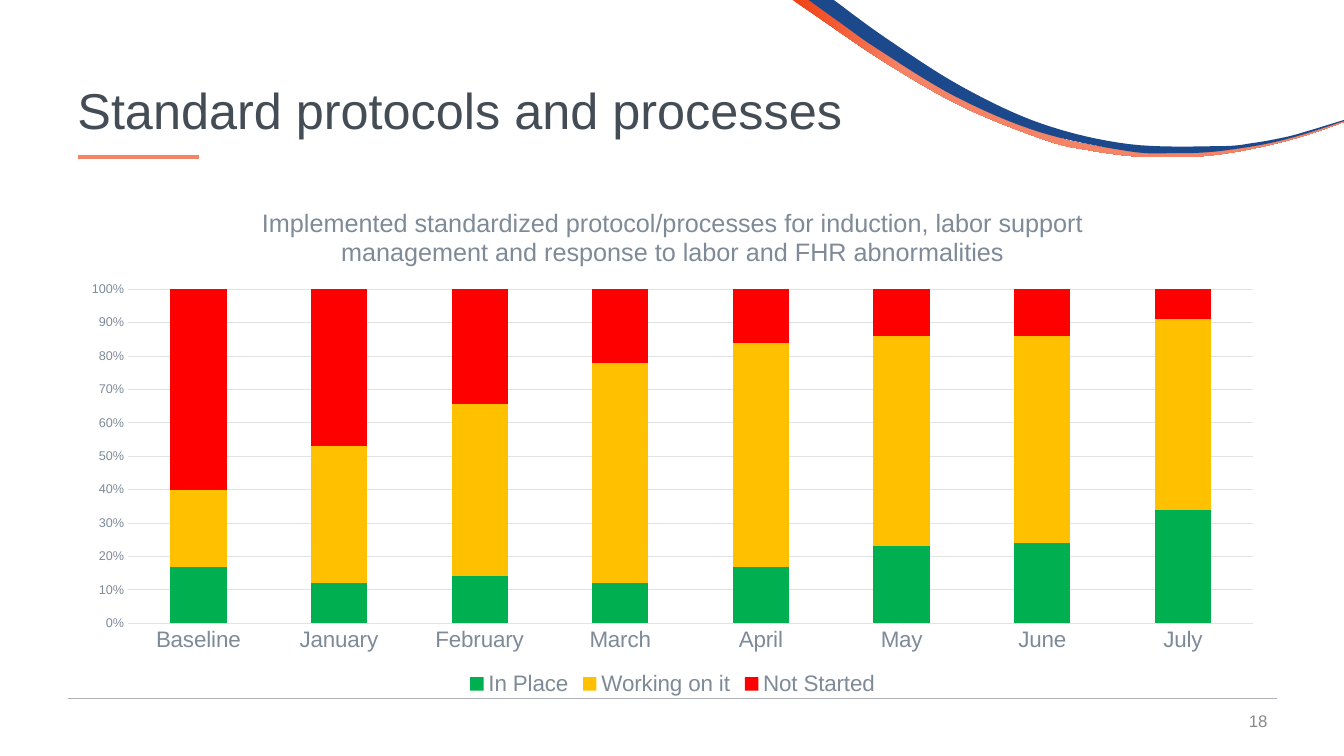
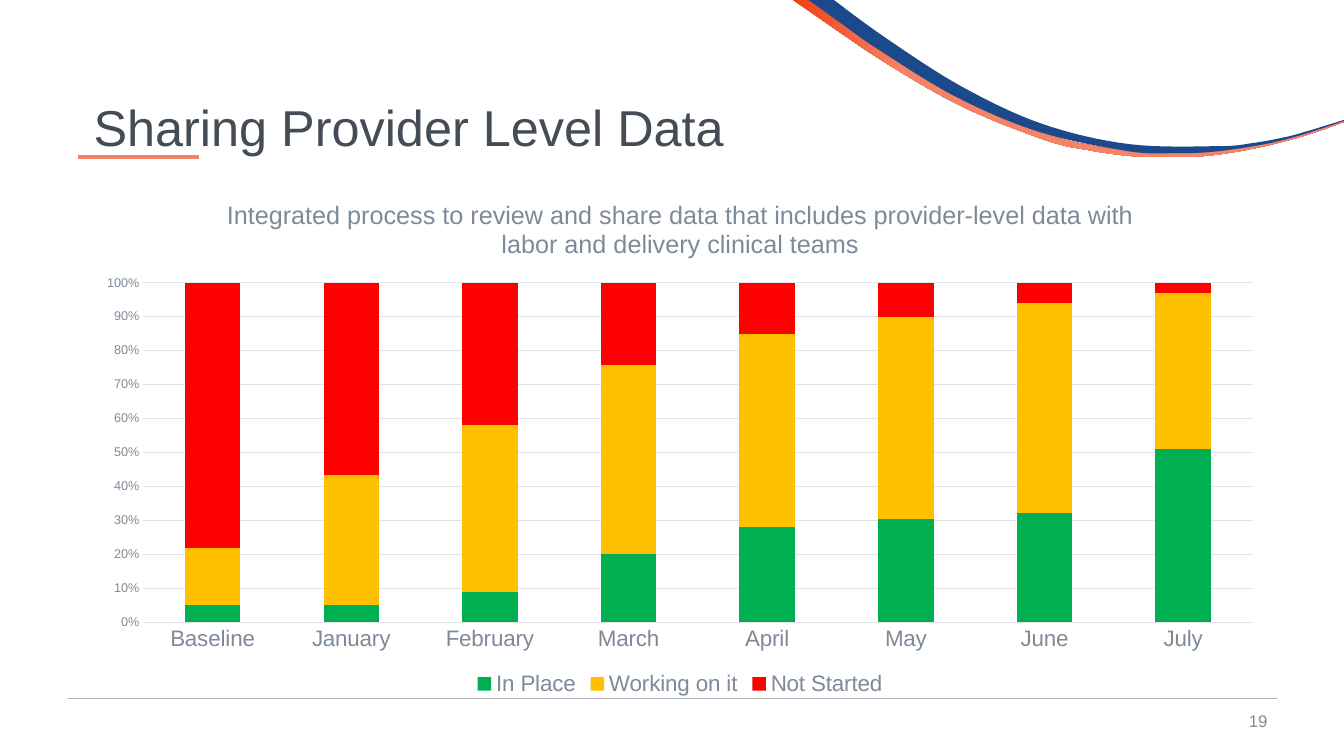
from lxml import etree
from pptx import Presentation
from pptx.chart.data import CategoryChartData
from pptx.dml.color import RGBColor
from pptx.enum.chart import XL_CHART_TYPE, XL_LEGEND_POSITION, XL_TICK_MARK
from pptx.enum.shapes import MSO_CONNECTOR
from pptx.enum.text import MSO_ANCHOR, PP_ALIGN
from pptx.oxml import parse_xml
from pptx.oxml.ns import nsdecls, qn
from pptx.util import Inches, Pt

STACKED = XL_CHART_TYPE.COLUMN_STACKED_100
BOTTOM = XL_LEGEND_POSITION.BOTTOM
NO_TICK = XL_TICK_MARK.NONE
STRAIGHT = MSO_CONNECTOR.STRAIGHT
MIDDLE = MSO_ANCHOR.MIDDLE
LEFT, RIGHT = PP_ALIGN.LEFT, PP_ALIGN.RIGHT

FONT = "Arial"
INK, GRAY, PALE, PAGE = "444C55", "7E8A98", "E1E4E7", "898989"
CORAL, FLAME, NAVY, RULE = "F58366", "F04115", "1C498B", "AFB3B9"

MONTHS = ["Baseline", "January", "February", "March", "April", "May", "June", "July"]
SERIES = [("In Place", "00B050"), ("Working on it", "FFC000"), ("Not Started", "FF0000")]

# Each ribbon: fill, upper edge left to right, lower edge right to left
RIBBONS = [
    (CORAL,
     [(8.05, 0), (8.82, 0.54), (9.58, 0.99), (10.39, 1.33), (10.81, 1.44),
      (11.25, 1.5), (11.68, 1.52), (12.01, 1.51), (12.34, 1.47), (12.67, 1.4),
      (12.99, 1.32), (13.33, 1.2)],
     [(13.33, 1.21), (12.99, 1.33), (12.67, 1.42), (12.35, 1.49), (12.02, 1.54),
      (11.69, 1.56), (11.24, 1.55), (10.8, 1.49), (10.37, 1.39), (9.55, 1.06),
      (8.78, 0.62), (8.04, 0.12), (7.86, 0)]),
    (NAVY,
     [(8.27, 0), (8.79, 0.38), (9.54, 0.86), (10.34, 1.23), (11.2, 1.43),
      (12.09, 1.45), (12.42, 1.42), (12.75, 1.36), (12.97, 1.3), (13.33, 1.19)],
     [(13.33, 1.2), (12.97, 1.32), (12.64, 1.41), (12.31, 1.47), (11.98, 1.51),
      (11.64, 1.52), (11.19, 1.5), (10.31, 1.31), (9.48, 0.96), (8.71, 0.49),
      (8.34, 0.23), (8.02, 0)]),
]
LINES = [(0.67, 12.67, 6.93, RULE, 0.5), (0.77, 1.97, 1.56, CORAL, 2.5)]
STEPS = 8

# Title, title place, chart place, chart title, values by series
SLIDES = [
    ("Standard protocols and processes", (0.67, 0.4), (0.67, 1.85, 12, 5.1),
     "Implemented standardized protocol/processes for induction, labor support "
     "management and response to labor and FHR abnormalities",
     [(17, 12, 14, 12, 17, 23, 24, 34),
      (23, 41, 51, 66, 67, 62, 62, 57),
      (60, 47, 34, 22, 16, 14, 14, 9)]),
    ("Sharing Provider Level Data", (0.83, 0.57), (0.83, 1.77, 11.83, 5.18),
     "Integrated process to review and share data that includes provider-level "
     "data with labor and delivery clinical teams",
     [(5, 5, 9, 20, 28, 30, 32, 51),
      (17, 38, 49, 55, 57, 59, 62, 46),
      (79, 56, 42, 24, 15, 10, 6, 3)]),
]
PLOT = {"x": 0.05, "y": 0.2, "w": 0.93, "h": 0.65}


def paint(color, code):
    color.rgb = RGBColor.from_string(code)


def write(frame, text, size, color, align=None, spacing=None):
    para = frame.paragraphs[0]
    para.alignment, para.line_spacing = align, spacing
    run = para.add_run()
    run.text = text
    run.font.name, run.font.size, run.font.bold = FONT, Pt(size), False
    paint(run.font.color, color)


deck = Presentation()
deck.slide_width, deck.slide_height = Inches(13.33), Inches(7.5)

for page, (title, spot, area, caption, rows) in enumerate(SLIDES, 18):
    slide = deck.slides.add_slide(deck.slide_layouts[6])
    shapes = slide.shapes

    for code, upper, lower in RIBBONS:
        dots = []
        for edge in (upper, lower):
            # Catmull-Rom curve through the points of one edge
            ends = [edge[0], *edge, edge[-1]]
            for a, b, c, d in zip(ends, ends[1:], ends[2:], ends[3:]):
                for step in range(STEPS):
                    t = step / STEPS
                    dots.append(tuple(
                        Inches((2 * q + (r - p) * t + (2 * p - 5 * q + 4 * r - s) * t ** 2
                                + (3 * q - p - 3 * r + s) * t ** 3) / 2)
                        for p, q, r, s in zip(a, b, c, d)))
            dots.append(tuple(map(Inches, edge[-1])))
        path = shapes.build_freeform(*dots[0])
        path.add_line_segments(dots[1:], close=True)
        band = path.convert_to_shape()
        band.shadow.inherit = False
        band.line.fill.background()
        if code == CORAL:
            band.fill.gradient()
            band.fill.gradient_angle = 0
            for stop, (place, tone) in zip(band.fill.gradient_stops,
                                           [(0, FLAME), (0.2, CORAL)]):
                stop.position = place
                paint(stop.color, tone)
        else:
            band.fill.solid()
            paint(band.fill.fore_color, code)

    for left, right, y, code, width in LINES:
        line = shapes.add_connector(STRAIGHT, Inches(left), Inches(y), Inches(right), Inches(y))
        line.line.width = Pt(width)
        paint(line.line.color, code)
        etree.SubElement(line._element.spPr, qn("a:effectLst"))

    for text, box, size, code, align, spacing in [
            (str(page), (9.67, 6.95, 3, 0.4), 12, PAGE, RIGHT, None),
            (title, (*spot, 12, 1.45), 36, INK, LEFT, 0.9)]:
        frame = shapes.add_textbox(*map(Inches, box)).text_frame
        frame.word_wrap, frame.vertical_anchor = True, MIDDLE
        write(frame, text, size, code, align=align, spacing=spacing)

    data = CategoryChartData(number_format="0")
    data.categories = MONTHS
    for (name, _), row in zip(SERIES, rows):
        data.add_series(name, row)
    chart = shapes.add_chart(STACKED, *map(Inches, area), data).chart
    chart.font.name, chart.font.size = FONT, Pt(10)
    paint(chart.font.color, INK)
    write(chart.chart_title.text_frame, caption, 18, GRAY)
    chart.chart_title.include_in_layout = False

    chart.has_legend = True
    legend = chart.legend
    legend.position, legend.include_in_layout = BOTTOM, False
    cats, vals = chart.category_axis, chart.value_axis
    for part, size in [(legend, 16), (cats.tick_labels, 16), (vals.tick_labels, 9)]:
        part.font.name, part.font.size = FONT, Pt(size)
        paint(part.font.color, GRAY)
    for axis in (cats, vals):
        axis.major_tick_mark = axis.minor_tick_mark = NO_TICK
    for rule in (cats.format.line, vals.major_gridlines.format.line):
        rule.width = Pt(0.75)
        paint(rule.color, PALE)
    vals.format.line.fill.background()
    vals.tick_labels.number_format = "0%"
    vals.tick_labels.number_format_is_linked = False

    plot = chart.plots[0]
    plot.gap_width, plot.overlap, plot.vary_by_categories = 150, 100, False
    for series, (_, code) in zip(plot.series, SERIES):
        series.format.fill.solid()
        paint(series.format.fill.fore_color, code)

    # Fix the inner plot area as shares of the chart
    field = chart._chartSpace.chart.plotArea
    for old in field.findall(qn("c:layout")):
        field.remove(old)
    sizes = "".join(f'<c:{key} val="{share}"/>' for key, share in PLOT.items())
    field.insert(0, parse_xml(
        f'<c:layout {nsdecls("c")}><c:manualLayout><c:layoutTarget val="inner"/>'
        f'<c:xMode val="edge"/><c:yMode val="edge"/>{sizes}</c:manualLayout></c:layout>'))

deck.save("out.pptx")
